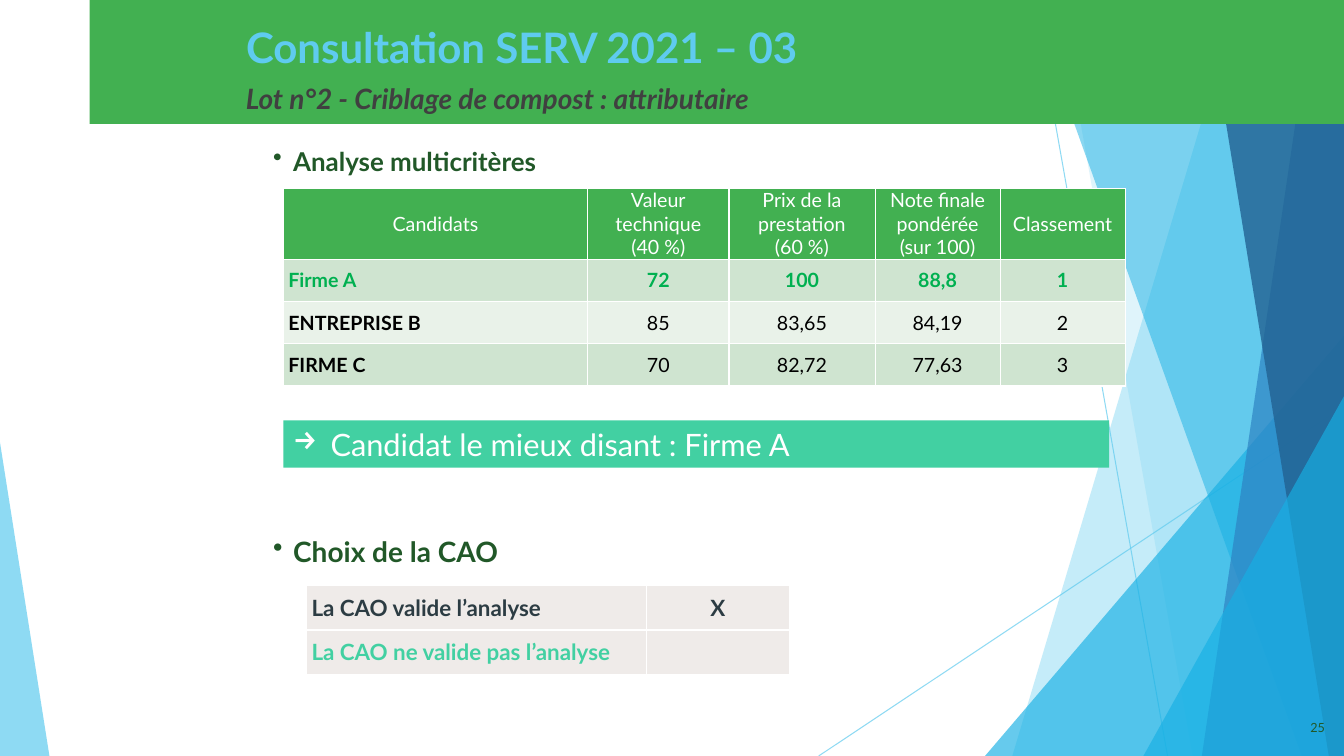
from lxml.etree import SubElement
from pptx import Presentation
from pptx.dml.color import RGBColor
from pptx.enum.shapes import MSO_CONNECTOR, MSO_SHAPE
from pptx.enum.text import MSO_ANCHOR, PP_ALIGN
from pptx.oxml.ns import qn
from pptx.util import Inches, Pt

WIDTH, HEIGHT = 13.33, 7.5
SKY, CYAN, GREEN, MINT = "5FCBEF", "17B0E4", "42B051", "42D0A2"
DARK_GREEN, WHITE, BLACK, SLATE = "215828", "FFFFFF", "000000", "2C3C43"
PALE, PALER, BEIGE, WINNER = "CFE4D0", "E9F2E9", "EFEBE9", "00B050"

# Decoration, from back to front
RAYS = [((10.25, 0), (11.58, HEIGHT)), ((WIDTH, 4.03), (8.12, HEIGHT))]
# ("band", top x, bottom x, colour, opacity): each reaches the right edge
# ("triangle", left, top, width, apex, colour, opacity): each stands on the bottom edge
FACETS = [
    ("band", 12.28, 10.04, SKY, 36),
    ("band", 10.5, 11.83, SKY, 20),
    ("triangle", 9.77, 3.33, 3.56, 1, CYAN, 66),
    ("band", 10.21, 12.91, CYAN, 50),
    ("band", 13.03, 11.92, "2E83C3", 70),
    ("band", 11.96, 13.18, "226292", 80),
    ("triangle", 11.34, 3.93, 1.99, 1, CYAN, 66),
    ("triangle", 0, 4.39, 0.49, 0, SKY, 70),
]

TITLE = "Consultation SERV 2021 – 03"
TITLE_BOX = (2.34, -0.03, 9.33, 0.79)
BANNER = (0.89, 0, 12.44, 1.23)
RESULT = "Candidat le mieux disant : Firme A"
RESULT_BOX = (2.81, 4.17, 8.19, 0.47)

# Text, box, font format, bullet, alignment
TEXTS = [
    ("Lot n°2 - Criblage de compost : attributaire", (2.34, 0.76, 9.33, 0.47),
     dict(size=20, color="404040", bold=True, italic=True), None, PP_ALIGN.LEFT),
    ("Analyse multicritères", (2.61, 1.39, 9.33, 0.39),
     dict(size=18.5, color=DARK_GREEN, bold=True), "•", PP_ALIGN.LEFT),
    ("Choix de la CAO", (2.61, 5.25, 5, 0.43),
     dict(size=20, color=DARK_GREEN, bold=True), "•", PP_ALIGN.LEFT),
    ("25", (10.13, 7.09, 3.11, 0.34),
     dict(size=9, color=DARK_GREEN), None, PP_ALIGN.RIGHT),
]

SCORES = [
    ("Candidats", "Valeur\vtechnique\v(40 %)", "Prix de la\vprestation\v(60 %)",
     "Note finale\vpondérée\v(sur 100)", "Classement"),
    ("Firme A", "72", "100", "88,8", "1"),
    ("ENTREPRISE B", "85", "83,65", "84,19", "2"),
    ("FIRME C", "70", "82,72", "77,63", "3"),
]
SCORE_COLUMNS, SCORE_ROWS = [3.02, 1.4, 1.45, 1.24, 1.24], [0.69, 0.42, 0.42, 0.42]
SCORE_FILLS = [GREEN, PALE, PALER, PALE]
SCORE_COLORS = [WHITE, WINNER, BLACK, BLACK]

DECISION = [("La CAO valide l’analyse", "X"), ("La CAO ne valide pas l’analyse", "")]
DECISION_COLUMNS, DECISION_ROWS = [3.37, 1.42], [0.44, 0.44]
DECISION_COLORS = [SLATE, MINT]


def rgb(color):
    return RGBColor.from_string(color)


def inches(lengths):
    return [Inches(length) for length in lengths]


def set_opacity(shape, percent):
    for color in shape.element.iter(qn("a:srgbClr")):
        SubElement(color, qn("a:alpha"), val=str(percent * 1000))


def paint(shape, color, opacity=100):
    shape.shadow.inherit = False
    shape.fill.solid()
    shape.fill.fore_color.rgb = rgb(color)
    shape.line.fill.background()
    if opacity < 100:
        set_opacity(shape, opacity)


def write(frame, text, size, color, align=PP_ALIGN.LEFT, **formats):
    frame.word_wrap = True
    paragraph = frame.paragraphs[0]
    paragraph.text = text
    paragraph.alignment = align
    for target in [paragraph.font] + [run.font for run in paragraph.runs]:
        values = dict(name="Lato", size=Pt(size), **formats)
        for name, value in values.items():
            setattr(target, name, value)
        target.color.rgb = rgb(color)
    return paragraph


def add_bullet(paragraph, symbol, indent):
    properties = paragraph._p.get_or_add_pPr()
    properties.set("marL", str(Inches(indent)))
    properties.set("indent", str(-Inches(indent)))
    bullet = SubElement(properties, qn("a:buChar"), char=symbol)
    properties.insert(0, bullet)


def add_ray(slide, start, end):
    ray = slide.shapes.add_connector(MSO_CONNECTOR.STRAIGHT, *inches(start + end))
    ray.line.width = Pt(0.75)
    ray.line.color.rgb = rgb(SKY)
    set_opacity(ray, 70)
    SubElement(ray.element.spPr, qn("a:effectLst"))


def add_band(slide, top_x, bottom_x, color, opacity):
    builder = slide.shapes.build_freeform(*inches((top_x, -0.01)), scale=1.0)
    corners = [(WIDTH, -0.01), (WIDTH, HEIGHT), (bottom_x, HEIGHT)]
    builder.add_line_segments([inches(corner) for corner in corners], close=True)
    paint(builder.convert_to_shape(), color, opacity)


def add_triangle(slide, left, top, width, apex, color, opacity):
    triangle = slide.shapes.add_shape(
        MSO_SHAPE.ISOSCELES_TRIANGLE, *inches((left, top, width, HEIGHT - top)))
    triangle.adjustments[0] = apex
    paint(triangle, color, opacity)


def add_rectangle(slide, box, color):
    rectangle = slide.shapes.add_shape(MSO_SHAPE.RECTANGLE, *inches(box))
    paint(rectangle, color)
    return rectangle


def add_borders(cell):
    for side in ("lnL", "lnR", "lnT", "lnB"):
        line = SubElement(cell._tc.get_or_add_tcPr(), qn(f"a:{side}"), w=str(Pt(1)))
        SubElement(SubElement(line, qn("a:solidFill")), qn("a:srgbClr"), val=WHITE)


def add_grid(slide, left, top, columns, heights, rows, fills, style):
    """Add a table; style(row, column) gives the font format of a cell."""
    box = inches((left, top, sum(columns), sum(heights)))
    table = slide.shapes.add_table(len(rows), len(columns), *box).table
    for column, width in zip(table.columns, columns):
        column.width = Inches(width)
    for row, height in zip(table.rows, heights):
        row.height = Inches(height)
    for r, texts in enumerate(rows):
        for c, text in enumerate(texts):
            cell = table.cell(r, c)
            add_borders(cell)
            cell.fill.solid()
            cell.fill.fore_color.rgb = rgb(fills[r])
            cell.vertical_anchor = MSO_ANCHOR.MIDDLE
            cell.margin_left = cell.margin_right = Inches(0.05)
            cell.margin_top = cell.margin_bottom = 0
            write(cell.text_frame, text, **style(r, c))


def score_style(r, c):
    centred = r == 0 or c > 0
    return dict(size=14, color=SCORE_COLORS[r], bold=r == 1 or (r > 1 and c == 0),
                align=PP_ALIGN.CENTER if centred else PP_ALIGN.LEFT)


def decision_style(r, c):
    return dict(size=16, color=DECISION_COLORS[r], bold=True,
                align=PP_ALIGN.CENTER if c else PP_ALIGN.LEFT)


def main():
    presentation = Presentation()
    presentation.slide_width, presentation.slide_height = inches((WIDTH, HEIGHT))
    slide = presentation.slides.add_slide(presentation.slide_layouts[5])

    for start, end in RAYS:
        add_ray(slide, start, end)
    add_facet = {"band": add_band, "triangle": add_triangle}
    for kind, *values in FACETS:
        add_facet[kind](slide, *values)
    add_rectangle(slide, BANNER, GREEN)

    title = slide.shapes.title
    title.left, title.top, title.width, title.height = inches(TITLE_BOX)
    title.text_frame.vertical_anchor = MSO_ANCHOR.BOTTOM
    write(title.text_frame, TITLE, 30, SKY, bold=True)
    slide.shapes.element.append(title.element)  # bring in front of the banner

    for text, box, formats, bullet, align in TEXTS:
        frame = slide.shapes.add_textbox(*inches(box)).text_frame
        frame.vertical_anchor = MSO_ANCHOR.TOP
        paragraph = write(frame, text, align=align, **formats)
        if bullet:
            add_bullet(paragraph, bullet, 0.2)

    result = add_rectangle(slide, RESULT_BOX, MINT)
    add_bullet(write(result.text_frame, RESULT, 22, WHITE), "→", 0.37)

    add_grid(slide, 2.81, 1.87, SCORE_COLUMNS, SCORE_ROWS, SCORES, SCORE_FILLS, score_style)
    add_grid(slide, 3.04, 5.81, DECISION_COLUMNS, DECISION_ROWS, DECISION,
             [BEIGE, BEIGE], decision_style)
    presentation.save("out.pptx")


if __name__ == "__main__":
    main()
